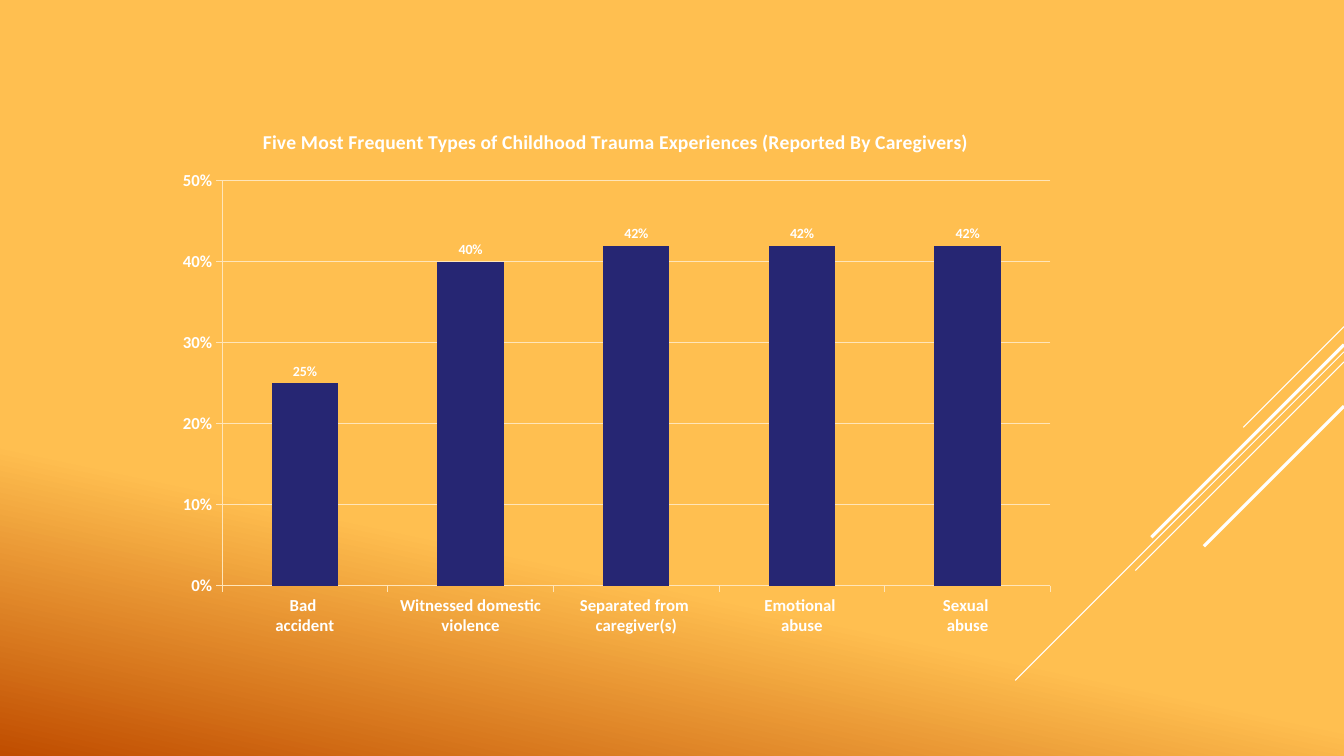
import pptx
import pptx.chart.data
import pptx.dml.color
import pptx.enum.chart
import pptx.enum.shapes
import pptx.oxml
import pptx.oxml.ns
import pptx.util

# Content
TITLE = "Five Most Frequent Types of Childhood Trauma Experiences (Reported By Caregivers)"
TRAUMA = [
    ("Bad \naccident", 0.25),
    ("Witnessed domestic violence", 0.40),
    ("Separated from \ncaregiver(s)", 0.42),
    ("Emotional \nabuse", 0.42),
    ("Sexual \nabuse", 0.42),
]
# Diagonals from the right edge: start height, run to the left (inches), width (pt)
DIAGONALS = [
    (3.24, 1.00, 0.75),
    (3.49, 3.26, 0.75),
    (3.59, 2.07, 0.75),
    (3.42, 1.91, 2.25),
    (4.03, 1.39, 2.25),
]
COLORS = {"glow": "FFBF50", "ember": "C04D00", "white": "FFFFFF",
          "grid": "FFE5B9", "bar": "262673"}
FONT = "Calibri"
WIDTH, HEIGHT = 13.33, 7.5
CHART = (1.63, 1.08, 8.96, 5.33)
PLOT = {"x": 0.064, "y": 0.134, "w": 0.917, "h": 0.754}  # shares of the chart


def rgb(name):
    return pptx.dml.color.RGBColor.from_string(COLORS[name])


def set_font(font, size):
    font.name, font.size, font.bold = FONT, pptx.util.Pt(size), True
    font.color.rgb = rgb("white")


def set_line(line, color, width):
    line.color.rgb = rgb(color)
    line.width = pptx.util.Pt(width)


prs = pptx.Presentation()
prs.slide_width = pptx.util.Inches(WIDTH)
prs.slide_height = pptx.util.Inches(HEIGHT)
s = prs.slides.add_slide(prs.slide_layouts[6])

# Background, angle counted anticlockwise
fill = s.background.fill
fill.gradient()
fill.gradient_angle = 360 - 102
for stop, (color, position) in zip(fill.gradient_stops, [("glow", 0.7), ("ember", 1)]):
    stop.color.rgb = rgb(color)
    stop.position = position

# Diagonals at 45 degrees
for top, run, width in DIAGONALS:
    ends = (WIDTH, top, WIDTH - run, top + run)
    line = s.shapes.add_connector(pptx.enum.shapes.MSO_CONNECTOR.STRAIGHT,
                                  *map(pptx.util.Inches, ends))
    set_line(line.line, "white", width)
    line.element.spPr.append(pptx.oxml.parse_xml(
        f'<a:effectLst {pptx.oxml.ns.nsdecls("a")}/>'))

# Chart
data = pptx.chart.data.CategoryChartData(number_format="0%")
data.categories = [name for name, _ in TRAUMA]
data.add_series("Series 1", [share for _, share in TRAUMA])
chart = s.shapes.add_chart(pptx.enum.chart.XL_CHART_TYPE.COLUMN_CLUSTERED,
                           *map(pptx.util.Inches, CHART), data).chart
set_font(chart.font, 12)
chart.has_legend = False
chart.has_title = True
r = chart.chart_title.text_frame.paragraphs[0].add_run()
r.text = TITLE
set_font(r.font, 14)
chart.chart_title.include_in_layout = False

# Plot area
area = chart.element.chart.plotArea
for layout in area.findall(pptx.oxml.ns.qn("c:layout")):
    area.remove(layout)
sizes = "".join(f'<c:{key} val="{share}"/>' for key, share in PLOT.items())
area.insert(0, pptx.oxml.parse_xml(
    f'<c:layout {pptx.oxml.ns.nsdecls("c")}><c:manualLayout>'
    '<c:layoutTarget val="inner"/><c:xMode val="edge"/><c:yMode val="edge"/>'
    f'{sizes}</c:manualLayout></c:layout>'))

# Axes
values = chart.value_axis
values.minimum_scale, values.maximum_scale, values.major_unit = 0, 0.5, 0.1
values.tick_labels.number_format = "0%"
values.tick_labels.number_format_is_linked = False
values.has_major_gridlines = True
set_line(values.major_gridlines.format.line, "grid", 0.75)
for axis in (chart.category_axis, values):
    axis.major_tick_mark = pptx.enum.chart.XL_TICK_MARK.OUTSIDE
    axis.minor_tick_mark = pptx.enum.chart.XL_TICK_MARK.NONE
    set_line(axis.format.line, "grid", 0.75)
    set_font(axis.tick_labels.font, 12)

# Columns and their labels
plot = chart.plots[0]
plot.gap_width = 150
plot.vary_by_categories = False
bars = plot.series[0]
bars.format.fill.solid()
bars.format.fill.fore_color.rgb = rgb("bar")
labels = bars.data_labels
labels.show_value = True
labels.number_format = "0%"
labels.number_format_is_linked = False
labels.position = pptx.enum.chart.XL_LABEL_POSITION.OUTSIDE_END
set_font(labels.font, 10)

prs.save("out.pptx")
